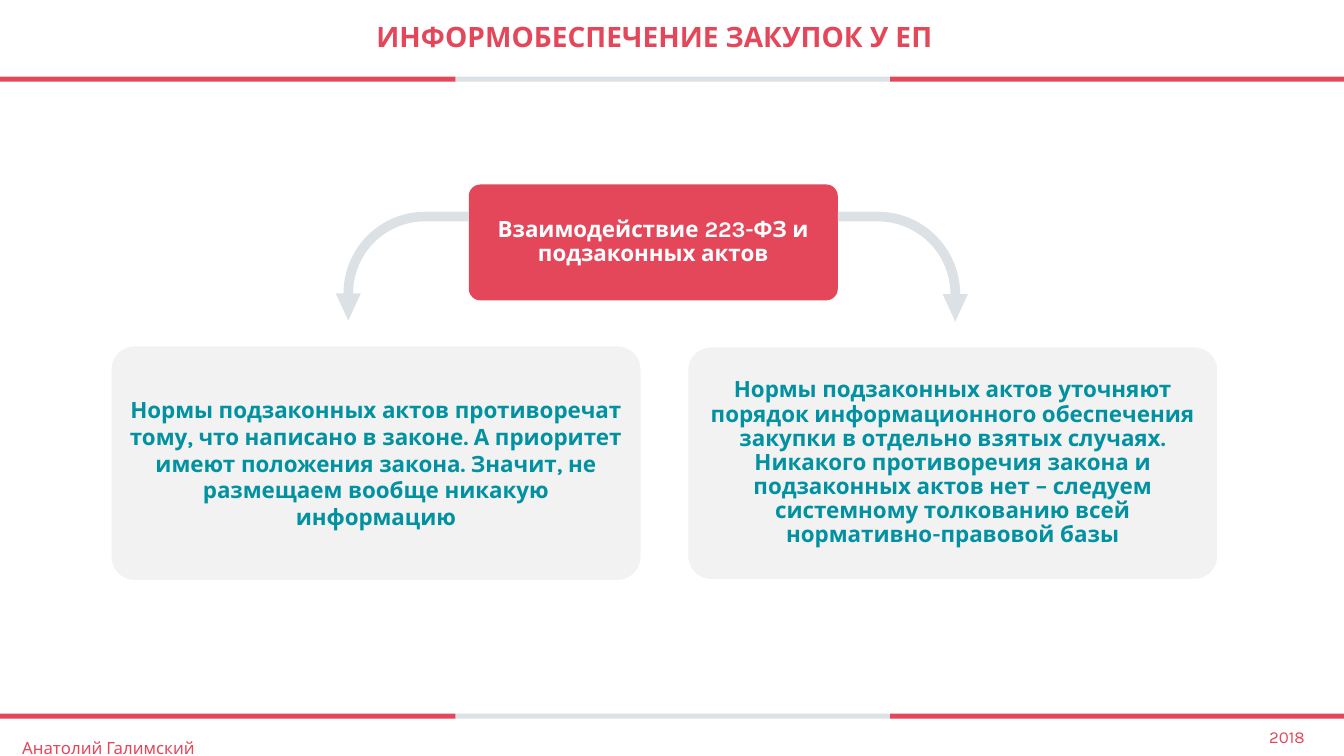
import pptx
import pptx.util
import pptx.dml.color
import pptx.enum.shapes
import pptx.enum.text

Inches = pptx.util.Inches
Pt = pptx.util.Pt
SHAPE = pptx.enum.shapes.MSO_SHAPE
ALIGN = pptx.enum.text.PP_ALIGN

COLORS = {
    "red": "E4465A",
    "silver": "DBE1E4",
    "card": "F2F2F2",
    "teal": "0291A0",
    "white": "FFFFFF",
}
FONT = "Karla"


def color(name):
    return pptx.dml.color.RGBColor.from_string(COLORS[name])


def add_shape(page, kind, area, fill, border=None):
    shape = page.shapes.add_shape(kind, *map(Inches, area))
    shape.shadow.inherit = False
    shape.fill.solid()
    shape.fill.fore_color.rgb = color(fill)
    if border:
        shape.line.color.rgb = color(border)
        shape.line.width = Pt(1)
    else:
        shape.line.fill.background()
    return shape


def write(box, text, size, ink, bold=False, align=ALIGN.CENTER, spacing=1.0,
          margins=(0, 0)):
    frame = box.text_frame
    frame.word_wrap = True
    frame.vertical_anchor = pptx.enum.text.MSO_ANCHOR.MIDDLE
    frame.margin_left = frame.margin_right = Inches(margins[0])
    frame.margin_top = frame.margin_bottom = Inches(margins[1])
    para = frame.paragraphs[0]
    para.text = text
    para.alignment = align
    para.line_spacing = spacing
    para.font.name = FONT
    para.font.size = Pt(size)
    para.font.bold = bold
    para.font.color.rgb = color(ink)


def add_label(page, area, text, size, **style):
    box = page.shapes.add_textbox(*map(Inches, area))
    write(box, text, size, "red", **style)


def add_stripe(page, top):
    for left, right, fill in ((0, 4.52, "red"), (4.52, 8.83, "silver"),
                              (8.83, 13.33, "red")):
        add_shape(page, SHAPE.RECTANGLE, (left, top, right - left, 0.05), fill)


def add_card(page, area, text, fill, ink, border=None, spacing=0.9):
    card = add_shape(page, SHAPE.ROUNDED_RECTANGLE, area, fill, border)
    card.adjustments[0] = 0.1
    write(card, text, 16, ink, bold=True, spacing=spacing, margins=(0.07, 0.07))


def add_bent_arrow(page, area, mirrored=False):
    arrow = add_shape(page, SHAPE.BENT_ARROW, area, "silver")
    for index, value in enumerate((0.088, 0.115, 0.25, 0.75)):
        arrow.adjustments[index] = value
    arrow.rotation = 90
    if mirrored:
        arrow._element.spPr.xfrm.set("flipV", "1")


def main():
    deck = pptx.Presentation()
    deck.slide_width = Inches(13.33)
    deck.slide_height = Inches(7.5)
    page = deck.slides.add_slide(deck.slide_layouts[6])

    # Header and footer stripes
    for top in (0.76, 7.08):
        add_stripe(page, top)

    # Title
    add_label(page, (1.97, 0, 9.04, 0.76), "ИНФОРМОБЕСПЕЧЕНИЕ ЗАКУПОК У ЕП", 20,
              bold=True, spacing=0.9, margins=(0.1, 0.05))

    # Topic and its two readings
    add_card(page, (4.65, 1.83, 3.66, 1.15),
             "Взаимодействие 223-ФЗ и подзаконных актов", "red", "white")
    add_card(page, (1.1, 3.43, 5.26, 2.33),
             "Нормы подзаконных актов противоречат тому, что написано в законе. "
             "А приоритет имеют положения закона. Значит, не размещаем вообще "
             "никакую информацию", "card", "teal", "white", spacing=1.0)
    add_card(page, (6.82, 3.44, 5.26, 2.31),
             "Нормы подзаконных актов уточняют порядок информационного "
             "обеспечения закупки в отдельно взятых случаях. Никакого "
             "противоречия закона и подзаконных актов нет – следуем системному "
             "толкованию всей нормативно-правовой базы", "card", "teal", "white")

    # Arrows from the topic down to the readings
    add_bent_arrow(page, (3.45, 1.98, 1.08, 1.32), mirrored=True)
    add_bent_arrow(page, (8.41, 2, 1.09, 1.29))

    # Footer
    add_label(page, (0.22, 7.24, 8.43, 0.36), "Анатолий Галимский", 12,
              align=ALIGN.LEFT)
    add_label(page, (9.94, 7.13, 3, 0.36), "2018", 12, align=ALIGN.RIGHT)

    deck.save("out.pptx")


if __name__ == "__main__":
    main()
